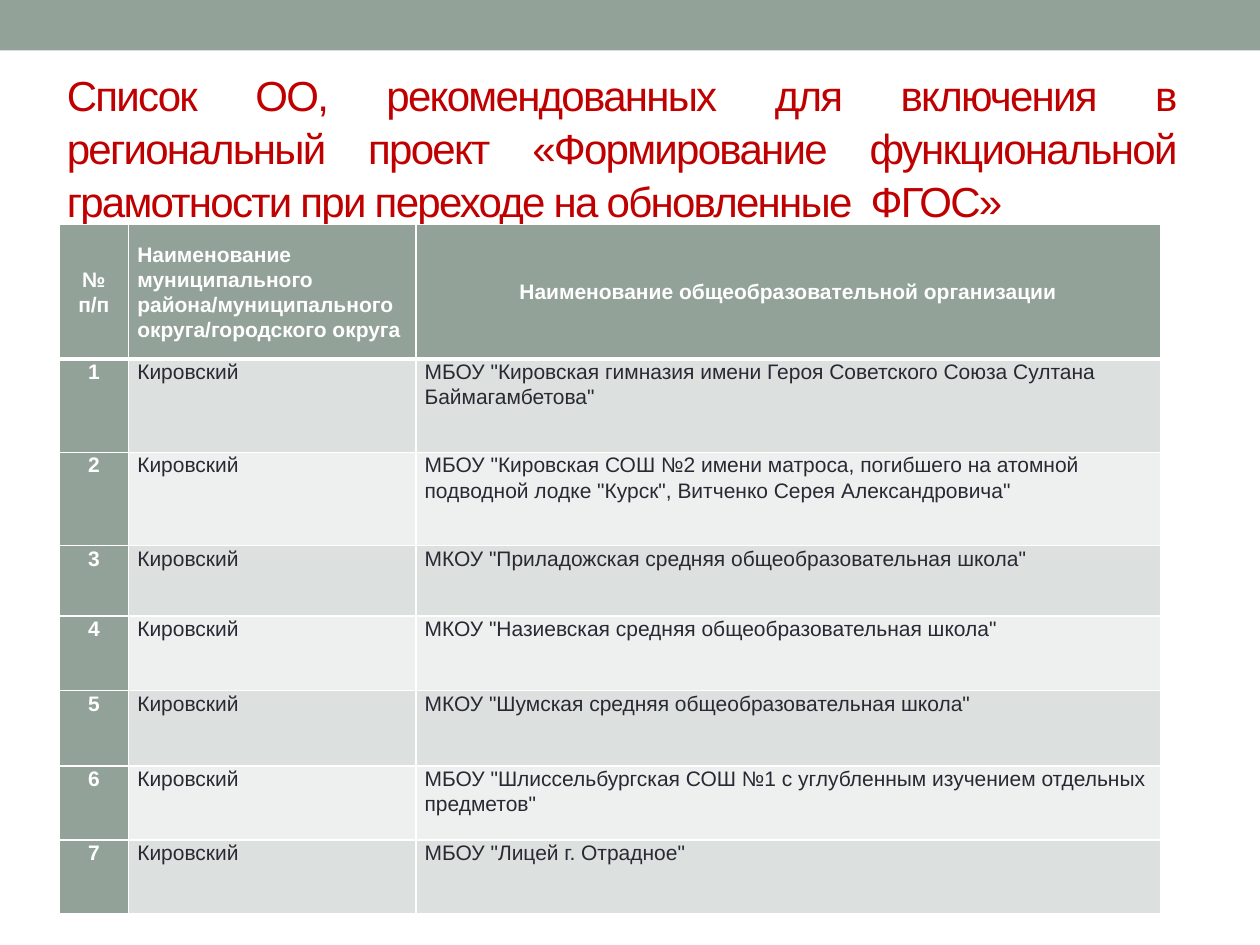
from lxml.etree import SubElement
from pptx import Presentation
from pptx.dml.color import RGBColor
from pptx.enum.shapes import MSO_SHAPE
from pptx.enum.text import MSO_ANCHOR, PP_ALIGN
from pptx.oxml.ns import qn
from pptx.util import Inches, Pt

SAGE = RGBColor(0x93, 0xA2, 0x99)
BAND_DARK = RGBColor(0xDC, 0xE0, 0xDE)
BAND_LIGHT = RGBColor(0xEE, 0xF0, 0xEF)
WHITE = RGBColor(0xFF, 0xFF, 0xFF)
INK = RGBColor(0x29, 0x29, 0x34)
RED = RGBColor(0xC0, 0x00, 0x00)

TITLE = ("Список ОО, рекомендованных для включения в региональный проект "
         "«Формирование функциональной грамотности при переходе на "
         "обновленные  ФГОС»")
DISTRICT = "Кировский"
HEADINGS = [
    "№ п/п",
    "Наименование муниципального района/муниципального округа/городского округа",
    "Наименование общеобразовательной организации",
]
SCHOOLS = [
    'МБОУ "Кировская гимназия имени Героя Советского Союза Султана Баймагамбетова"',
    'МБОУ "Кировская СОШ №2 имени матроса, погибшего на атомной подводной лодке '
    '"Курск", Витченко Серея Александровича"',
    'МКОУ "Приладожская средняя общеобразовательная школа"',
    'МКОУ "Назиевская средняя общеобразовательная школа"',
    'МКОУ "Шумская средняя общеобразовательная школа"',
    'МБОУ "Шлиссельбургская СОШ №1 с углубленным изучением отдельных предметов"',
    'МБОУ "Лицей г. Отрадное"',
]
COLUMN_WIDTHS = [0.55, 2.28, 5.91]
ROW_HEIGHTS = [1.07, 0.74, 0.74, 0.56, 0.59, 0.6, 0.59, 0.58]


def write(frame, text, size=12, color=INK, bold=False, align=PP_ALIGN.LEFT,
          line_spacing=1.07, space_after=0, tracking=0):
    paragraph = frame.paragraphs[0]
    paragraph.alignment = align
    paragraph.line_spacing = line_spacing
    paragraph.space_before = Pt(0)
    paragraph.space_after = Pt(space_after)
    run = paragraph.add_run()
    run.text = text
    run.font.name = "Arial"
    run.font.size = Pt(size)
    run.font.bold = bold
    run.font.color.rgb = color
    if tracking:
        run.font._element.set("spc", str(tracking * 100))


def set_borders(cell, **widths):
    """Draw white cell borders; widths in points by side: L, R, T, B."""
    properties = cell._tc.get_or_add_tcPr()
    for side in "LRTB":
        line = SubElement(properties, qn(f"a:ln{side}"),
                          w=str(Pt(widths.get(side, 1))))
        fill = SubElement(line, qn("a:solidFill"))
        SubElement(fill, qn("a:srgbClr"), val=str(WHITE))


def add_top_band(slide, width):
    band = slide.shapes.add_shape(MSO_SHAPE.RECTANGLE, 0, 0, width, Inches(0.4))
    band.shadow.inherit = False
    band.fill.solid()
    band.fill.fore_color.rgb = SAGE
    band.line.fill.background()


def fill_title(slide):
    title = slide.shapes.title
    title.left, title.top = Inches(0.43), Inches(0.36)
    title.width, title.height = Inches(9), Inches(1.08)
    frame = title.text_frame
    frame.word_wrap = True
    frame.vertical_anchor = MSO_ANCHOR.TOP
    frame.margin_top = Inches(0.17)
    write(frame, TITLE, size=24, color=RED, align=PP_ALIGN.JUSTIFY,
          line_spacing=1.05, tracking=-1)


def format_cell(cell, text, row, column):
    is_header = row == 0
    is_label = is_header or column == 0
    cell.margin_left = cell.margin_right = Inches(0.07)
    cell.margin_top = cell.margin_bottom = 0
    cell.vertical_anchor = MSO_ANCHOR.MIDDLE if is_header else MSO_ANCHOR.TOP
    set_borders(cell, T=3 if row == 1 else 1, B=3 if is_header else 1)
    cell.fill.solid()
    band = BAND_DARK if row % 2 else BAND_LIGHT
    cell.fill.fore_color.rgb = SAGE if is_label else band
    centred = column == 0 or (is_header and column == 2)
    write(cell.text_frame, text, bold=is_label,
          color=WHITE if is_label else INK,
          align=PP_ALIGN.CENTER if centred else PP_ALIGN.LEFT,
          space_after=0 if is_label else 8)


def add_school_table(slide):
    rows = [HEADINGS] + [[str(number), DISTRICT, school]
                         for number, school in enumerate(SCHOOLS, 1)]
    table = slide.shapes.add_table(
        len(rows), len(HEADINGS), Inches(0.47), Inches(1.78),
        Inches(sum(COLUMN_WIDTHS)), Inches(sum(ROW_HEIGHTS))).table
    for column, width in zip(table.columns, COLUMN_WIDTHS):
        column.width = Inches(width)
    for row, height in zip(table.rows, ROW_HEIGHTS):
        row.height = Inches(height)
    for r, texts in enumerate(rows):
        for c, text in enumerate(texts):
            format_cell(table.cell(r, c), text, r, c)


def main():
    deck = Presentation()
    deck.slide_width, deck.slide_height = Inches(10), Inches(7.5)
    slide = deck.slides.add_slide(deck.slide_layouts[5])
    add_top_band(slide, deck.slide_width)
    fill_title(slide)
    add_school_table(slide)
    deck.save("out.pptx")


if __name__ == "__main__":
    main()
